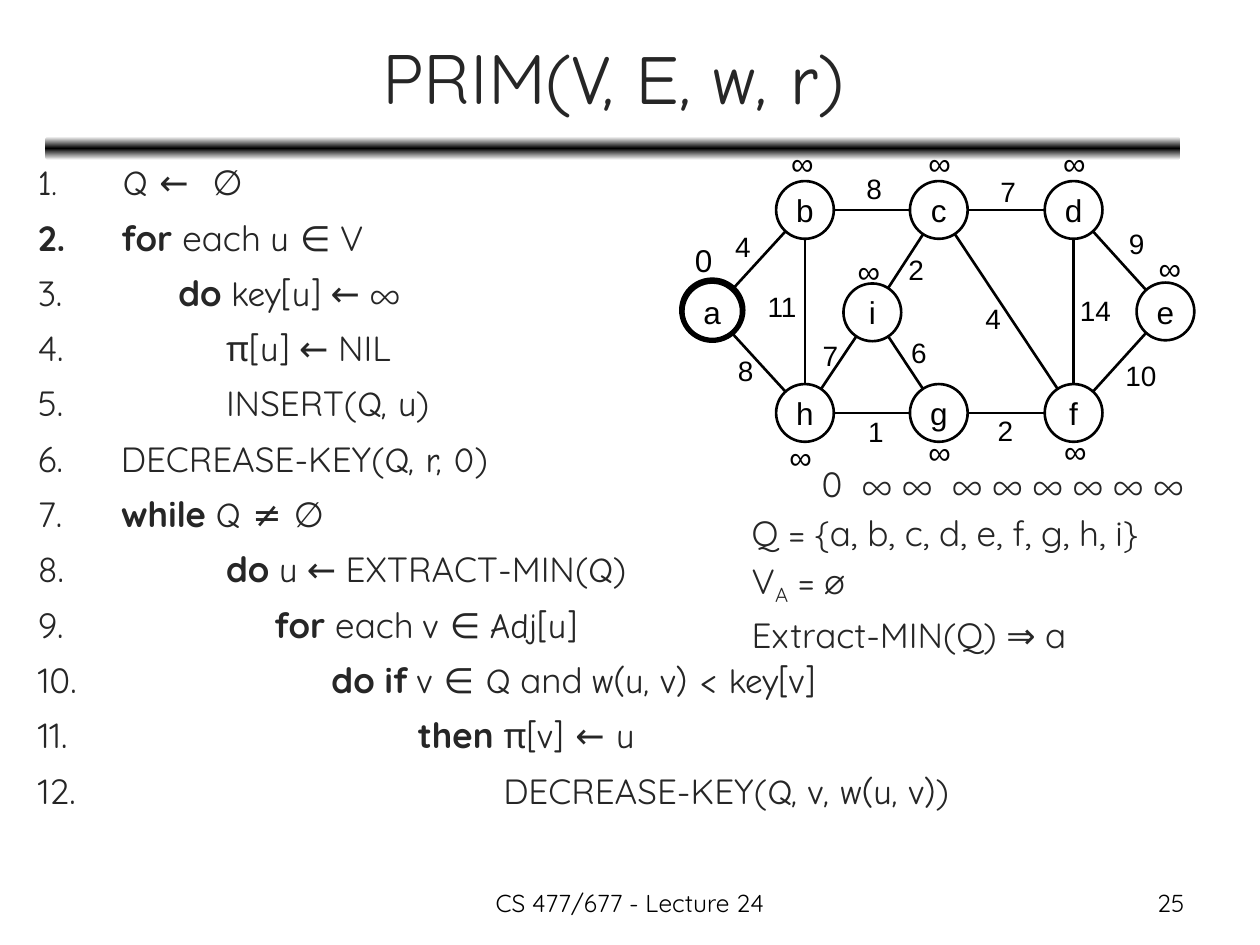
from copy import deepcopy
from math import hypot

from lxml import etree
from pptx import Presentation
from pptx.dml.color import RGBColor
from pptx.enum.shapes import MSO_CONNECTOR, MSO_SHAPE
from pptx.enum.text import MSO_ANCHOR, PP_ALIGN
from pptx.oxml.ns import qn
from pptx.util import Pt

LEFT, CENTER, RIGHT = PP_ALIGN.LEFT, PP_ALIGN.CENTER, PP_ALIGN.RIGHT
TOP, MIDDLE = MSO_ANCHOR.TOP, MSO_ANCHOR.MIDDLE
OVAL, BAR = MSO_SHAPE.OVAL, MSO_SHAPE.ROUNDED_RECTANGLE
STRAIGHT = MSO_CONNECTOR.STRAIGHT

BLACK, INK, WHITE = (RGBColor.from_string(code) for code in ("000000", "262626", "FFFFFF"))
THEME = {
    "title": {"name": "Quicksand", "size": Pt(40), "color": INK},
    "title code": {"name": "Comic Neue", "size": Pt(40), "color": INK},
    "plain": {"name": "Quicksand", "size": Pt(20), "color": INK},
    "bold": {"name": "Quicksand", "size": Pt(20), "color": INK, "bold": True},
    "code": {"name": "Comic Neue", "size": Pt(20), "color": INK},
    "node": {"name": "Arial", "size": Pt(18), "color": BLACK},
    "weight": {"name": "Arial", "size": Pt(16), "color": BLACK},
    "footer": {"name": "Quicksand", "size": Pt(14), "color": BLACK},
}

TITLE = [("title", "PRIM("), ("title code", "V, E, w, r"), ("title", ")")]
STEPS = [
    [("code", " Q ←  ∅")],
    [("bold", " for "), ("plain", "each "), ("code", "u "), ("plain", "∈ V")],
    [("plain", "       "), ("bold", "do "), ("code", "key[u]"), ("plain", " ← ∞")],
    [("plain", "            "), ("code", "π[u]"), ("plain", " ← NIL")],
    [("plain", "            INSERT("), ("code", "Q, u"), ("plain", ")")],
    [("plain", " DECREASE-KEY("), ("code", "Q, r, 0"), ("plain", ")")],
    [("plain", " "), ("bold", "while "), ("code", "Q ≠ ∅")],
    [("plain", "            "), ("bold", "do "), ("code", "u"),
     ("plain", " ← EXTRACT-MIN("), ("code", "Q"), ("plain", ")")],
    [("plain", "                 "), ("bold", "for "), ("plain", "each "),
     ("code", "v "), ("plain", "∈ "), ("code", "Adj[u]")],
    [("plain", "                       "), ("bold", "do if "), ("code", "v ∈ Q"),
     ("plain", " and "), ("code", "w(u, v) < key[v]")],
    [("plain", "                                "), ("bold", "then "), ("code", "π[v] ← u")],
    [("plain", "                                         DECREASE-KEY("),
     ("code", "Q, v, w(u, v)"), ("plain", ")")],
]
STATE = [
    [("plain", "0  ∞ ∞  ∞ ∞ ∞ ∞ ∞ ∞")],
    [("plain", "Q = {a, b, c, d, e, f, g, h, i}")],
    [("plain", "V"), ("subscript", "A"), ("plain", " = ∅")],
    [("plain", "Extract-MIN(Q) ⇒ a")],
]
THEME["subscript"] = THEME["plain"]

NODES = {
    "a": (407, 178), "b": (460, 120), "c": (536.5, 120), "d": (613.5, 120),
    "e": (666, 178), "h": (460, 236), "g": (536.5, 236), "f": (613.5, 236),
    "i": (498.5, 178.5),
}
EDGES = [
    ("a", "b", "4", 413, 127.5), ("b", "c", "8", 488, 94.5),
    ("c", "d", "7", 564.5, 96), ("a", "h", "8", 414.5, 198.5),
    ("b", "h", "11", 431.5, 162), ("h", "g", "1", 489, 233.5),
    ("g", "f", "2", 563, 232.5), ("h", "i", "7", 463, 190),
    ("i", "c", "2", 512, 140.5), ("c", "f", "4", 556, 169),
    ("d", "f", "14", 610, 164), ("d", "e", "9", 638, 126),
    ("f", "e", "10", 636, 201.5), ("i", "g", "6", 513.5, 188),
]
KEYS = [
    ("0", 390, 134), ("∞", 445, 79), ("∞", 523.5, 79), ("∞", 600.5, 79),
    ("∞", 483, 140.5), ("∞", 655, 139), ("∞", 444, 247), ("∞", 523.5, 244),
    ("∞", 601, 243.5),
]
RADIUS = 16.5


def write(box, lines, align=LEFT, anchor=TOP, wrap=True, numbered=False, **formats):
    frame = box.text_frame
    frame.word_wrap, frame.vertical_anchor = wrap, anchor
    for index, runs in enumerate(lines):
        para = frame.paragraphs[0] if index == 0 else frame.add_paragraph()
        para.alignment = align
        for name, value in formats.items():
            if index or name != "space_before":
                setattr(para, name, value)
        if numbered:
            props = para._p.get_or_add_pPr()
            props.set("marL", str(Pt(42)))
            props.set("indent", str(-Pt(42)))
            etree.SubElement(props, qn("a:buAutoNum"), type="arabicPeriod")
        for style, text in runs:
            span = para.add_run()
            span.text = text
            for name, value in THEME[style].items():
                if name == "color":
                    span.font.color.rgb = value
                else:
                    setattr(span.font, name, value)
            if style == "subscript":
                span._r.get_or_add_rPr().set("baseline", "-25000")


def add_text(page, place, lines, **options):
    box = page.shapes.add_textbox(*map(Pt, place))
    write(box, lines, **options)
    return box


def add_circle(page, place, weight):
    circle = page.shapes.add_shape(OVAL, *map(Pt, place))
    circle.shadow.inherit = False
    circle.fill.background()
    circle.line.color.rgb = BLACK
    circle.line.width = Pt(weight)
    return circle


def add_title_bar(page):
    bar = page.shapes.add_shape(BAR, *map(Pt, (26, 78, 648.5, 13.5)))
    bar.shadow.inherit = False
    bar.line.fill.background()
    bar.fill.gradient()
    bar.fill.gradient_angle = 270
    stops = bar._element.spPr.find(qn("a:gradFill")).find(qn("a:gsLst"))
    stops.append(deepcopy(stops[0]))
    for stop, position, color in zip(bar.fill.gradient_stops, (0, 0.5, 1), (WHITE, BLACK, WHITE)):
        stop.position = position
        stop.color.rgb = color


def add_edge(page, start, end):
    (x1, y1), (x2, y2) = NODES[start], NODES[end]
    share = RADIUS / hypot(x2 - x1, y2 - y1)
    dx, dy = (x2 - x1) * share, (y2 - y1) * share
    edge = page.shapes.add_connector(STRAIGHT, *map(Pt, (x1 + dx, y1 + dy, x2 - dx, y2 - dy)))
    edge.line.color.rgb = BLACK
    edge.line.width = Pt(1.5)
    etree.SubElement(edge._element.spPr, qn("a:effectLst"))


def add_graph(page):
    for name, (x, y) in NODES.items():
        place = (x - RADIUS, y - RADIUS, 2 * RADIUS, 2 * RADIUS)
        node = add_circle(page, place, 1.5)
        write(node, [[("node", name)]], align=CENTER, anchor=MIDDLE, wrap=False)
    for start, end, weight, left, top in EDGES:
        add_edge(page, start, end)
        place = (left, top, 14 + 9 * len(weight), 26.5)
        add_text(page, place, [[("weight", weight)]], wrap=False)
    add_circle(page, (389.5, 160, 35, 34.5), 3)
    for key, left, top in KEYS:
        width = 24.5 if key == "0" else 27.5
        add_text(page, (left, top, width, 29), [[("node", key)]], wrap=False)


def main():
    """Build the slide on Prim's algorithm."""
    deck = Presentation()
    deck.slide_width, deck.slide_height = Pt(720), Pt(540)
    page = deck.slides.add_slide(deck.slide_layouts[6])
    add_title_bar(page)
    add_text(page, (26.5, 8, 648, 71), [TITLE], align=CENTER, anchor=MIDDLE)
    add_text(page, (14.5, 83.5, 667.5, 440.5), STEPS, numbered=True,
             line_spacing=1.2, space_before=Pt(2.8))
    add_graph(page)
    state = add_text(page, (422.5, 261, 296, 160), STATE, space_before=Pt(3.5))
    state.text_frame.paragraphs[0]._p.get_or_add_pPr().set("marL", str(Pt(40)))
    add_text(page, (246, 504, 228, 25), [[("footer", "CS 477/677 - Lecture 24")]], align=CENTER)
    add_text(page, (516, 504, 168, 25), [[("footer", "25")]], align=RIGHT)
    deck.save("out.pptx")


if __name__ == "__main__":
    main()
